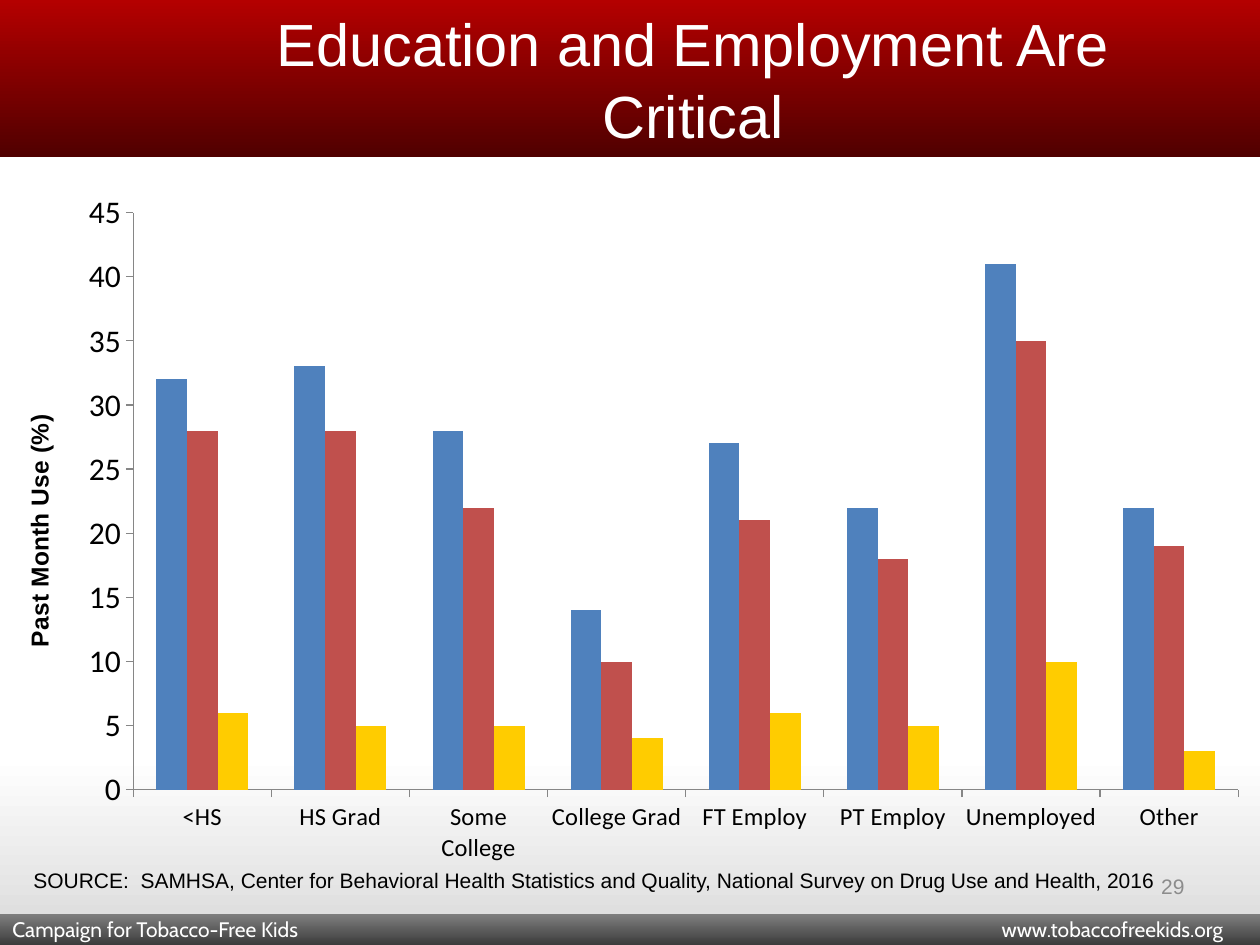
from lxml import etree
from pptx import Presentation
from pptx import util as u
from pptx.chart.data import CategoryChartData
from pptx.dml.color import RGBColor
from pptx.enum import chart as charts, shapes, text
from pptx.oxml import parse_xml
from pptx.oxml.ns import nsdecls, qn

Pt = u.Pt
rgb = RGBColor.from_string


def shade_down(fill, stops):
    """Fill from top to bottom with two (position, colour) stops."""
    fill.gradient()
    fill.gradient_angle = 270
    for stop, (position, color) in zip(fill.gradient_stops, stops):
        stop.position = position
        stop.color.rgb = rgb(color)


def place_in_chart(element, index, **values):
    """Give a chart part a manual layout, as fractions of the chart."""
    for old in element.findall(qn("c:layout")):
        element.remove(old)
    layout = parse_xml(f'<c:layout {nsdecls("c")}><c:manualLayout/></c:layout>')
    for tag, value in values.items():
        etree.SubElement(layout[0], qn(f"c:{tag}")).set("val", str(value))
    element.insert(index, layout)


prs = Presentation()
prs.slide_width, prs.slide_height = Pt(720), Pt(540)
slide = prs.slides.add_slide(prs.slide_layouts[5])
shade_down(slide.background.fill, [(0.8, "FFFFFF"), (1, "D9D9D9")])

# Header and footer bands
bands = []
for top, height, start, end in [(0, 90, "B40000", "500000"), (522, 18, "808080", "3C3C3C")]:
    band = slide.shapes.add_shape(shapes.MSO_SHAPE.RECTANGLE, 0, Pt(top), Pt(720), Pt(height))
    band.shadow.inherit = False
    band.line.fill.background()
    shade_down(band.fill, [(0, start), (1, end)])
    bands.append(band)
header, footer = bands

# Title, brought in front of the header band
title = slide.shapes.title
header._element.addnext(title._element)
title.left, title.top, title.width, title.height = Pt(144), 0, Pt(504), Pt(90)

# Chart
data = CategoryChartData(number_format="0")
data.categories = ["<HS", "HS Grad", "Some College", "College Grad",
                   "FT Employ", "PT Employ", "Unemployed", "Other"]
use = [
    ("4F81BD", (32, 33, 28, 14, 27, 22, 41, 22)),
    ("C0504D", (28, 28, 22, 10, 21, 18, 35, 19)),
    ("FFCC00", (6, 5, 5, 4, 6, 5, 10, 3)),
]
for _, values in use:
    data.add_series("", values)
chart = slide.shapes.add_chart(charts.XL_CHART_TYPE.COLUMN_CLUSTERED, Pt(3.6), Pt(103.7),
                               Pt(725.8), Pt(396), data).chart
chart.has_legend = chart.has_title = False
chart.font.name, chart.font.size = "Calibri", Pt(18)
chart.font.color.rgb = rgb("000000")
plot = chart.plots[0]
plot.gap_width, plot.overlap, plot.vary_by_categories = 150, 0, False
for series, (color, _) in zip(plot.series, use):
    series.format.fill.solid()
    series.format.fill.fore_color.rgb = rgb(color)

levels, groups = chart.value_axis, chart.category_axis
for axis, size in [(levels, 18), (groups, 14)]:
    axis.has_major_gridlines = False
    axis.major_tick_mark = charts.XL_TICK_MARK.OUTSIDE
    axis.minor_tick_mark = charts.XL_TICK_MARK.NONE
    axis.tick_labels.font.size = Pt(size)
    axis.format.line.color.rgb = rgb("868686")
    axis.format.line.width = Pt(0.75)
levels.minimum_scale, levels.maximum_scale, levels.major_unit = 0, 45, 5

levels_title = levels.axis_title
levels_title.text_frame.text = "Past Month Use (%)"
levels_font = levels_title.text_frame.paragraphs[0].runs[0].font
for key, value in {"name": "Arial", "size": Pt(14), "bold": True}.items():
    setattr(levels_font, key, value)
place_in_chart(levels_title._element, 1, xMode="edge", yMode="edge", x=0.01, y=0.33)
place_in_chart(chart._chartSpace.chart.plotArea, 0, layoutTarget="inner", xMode="edge",
               yMode="edge", x=0.1, y=0.045, w=0.87, h=0.833)

# Text
page = slide.shapes.add_textbox(Pt(516), Pt(492), Pt(168), Pt(28.8))
source = slide.shapes.add_textbox(Pt(12), Pt(492), Pt(666), Pt(21.6))
left, center, right = text.PP_ALIGN.LEFT, text.PP_ALIGN.CENTER, text.PP_ALIGN.RIGHT
middle, upper = text.MSO_ANCHOR.MIDDLE, text.MSO_ANCHOR.TOP
for shape, words, align, anchor, font_name, size, color in [
    (title, "Education and Employment Are Critical", center, middle, "Arial", 34, "FFFFFF"),
    (footer, "Campaign for Tobacco-Free Kids\twww.tobaccofreekids.org", left, middle,
     "Cabin", 12, "FFFFFF"),
    (page, "29", right, middle, "Arial", 12, "8C8C8C"),
    (source, "SOURCE:  SAMHSA, Center for Behavioral Health Statistics and Quality, "
     "National Survey on Drug Use and Health, 2016", left, upper, "Arial", 12, "000000"),
]:
    frame = shape.text_frame
    frame.word_wrap = True
    frame.auto_size = text.MSO_AUTO_SIZE.NONE
    frame.vertical_anchor = anchor
    paragraph = frame.paragraphs[0]
    paragraph.alignment = align
    if "\t" in words:
        tabs = etree.SubElement(paragraph._p.get_or_add_pPr(), qn("a:tabLst"))
        etree.SubElement(tabs, qn("a:tab"), pos=str(Pt(692)), algn="r")
    run = paragraph.add_run()
    run.text = words
    run.font.name, run.font.size = font_name, Pt(size)
    run.font.color.rgb = rgb(color)

prs.save("out.pptx")
